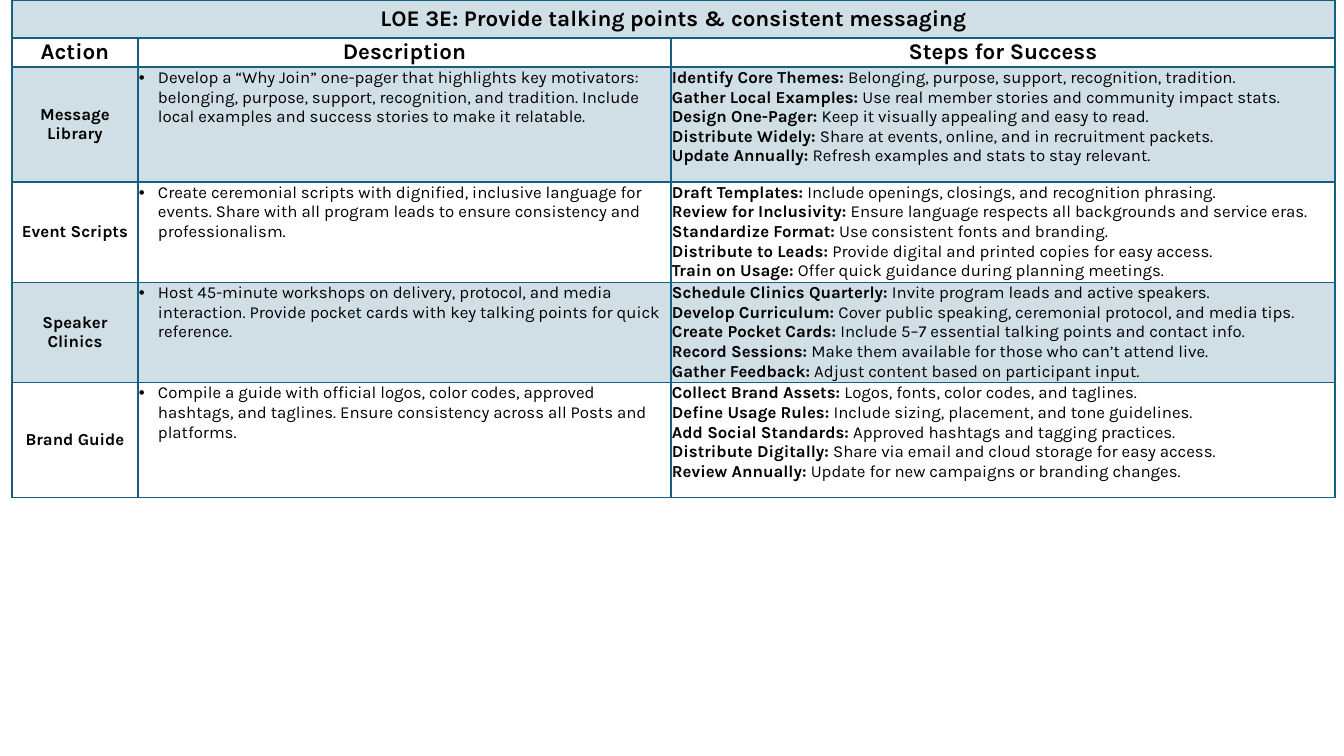
"""Builds the LOE 3E action plan slide as one table."""
from dataclasses import dataclass

from lxml import etree
from pptx import Presentation
from pptx.dml.color import RGBColor
from pptx.enum.text import MSO_ANCHOR, PP_ALIGN
from pptx.oxml.ns import qn
from pptx.util import Pt

TOP, MIDDLE = MSO_ANCHOR.TOP, MSO_ANCHOR.MIDDLE
LEFT, CENTER = PP_ALIGN.LEFT, PP_ALIGN.CENTER

TITLE = "LOE 3E: Provide talking points & consistent messaging"
HEADINGS = ("Action", "Description", "Steps for Success")
ACTIONS = [
    ("Message Library",
     "Develop a “Why Join” one-pager that highlights key motivators: belonging, purpose, "
     "support, recognition, and tradition. Include local examples and success stories to "
     "make it relatable.",
     [("Identify Core Themes:", "Belonging, purpose, support, recognition, tradition."),
      ("Gather Local Examples:", "Use real member stories and community impact stats."),
      ("Design One-Pager:", "Keep it visually appealing and easy to read."),
      ("Distribute Widely:", "Share at events, online, and in recruitment packets."),
      ("Update Annually:", "Refresh examples and stats to stay relevant.")]),
    ("Event Scripts",
     "Create ceremonial scripts with dignified, inclusive language for events. Share with "
     "all program leads to ensure consistency and professionalism.",
     [("Draft Templates:", "Include openings, closings, and recognition phrasing."),
      ("Review for Inclusivity:", "Ensure language respects all backgrounds and service eras."),
      ("Standardize Format:", "Use consistent fonts and branding."),
      ("Distribute to Leads:", "Provide digital and printed copies for easy access."),
      ("Train on Usage:", "Offer quick guidance during planning meetings.")]),
    ("Speaker Clinics",
     "Host 45-minute workshops on delivery, protocol, and media interaction. Provide pocket "
     "cards with key talking points for quick reference.",
     [("Schedule Clinics Quarterly:", "Invite program leads and active speakers."),
      ("Develop Curriculum:", "Cover public speaking, ceremonial protocol, and media tips."),
      ("Create Pocket Cards:", "Include 5–7 essential talking points and contact info."),
      ("Record Sessions:", "Make them available for those who can’t attend live."),
      ("Gather Feedback:", "Adjust content based on participant input.")]),
    ("Brand Guide",
     "Compile a guide with official logos, color codes, approved hashtags, and taglines. "
     "Ensure consistency across all Posts and platforms.",
     [("Collect Brand Assets:", "Logos, fonts, color codes, and taglines."),
      ("Define Usage Rules:", "Include sizing, placement, and tone guidelines."),
      ("Add Social Standards:", "Approved hashtags and tagging practices."),
      ("Distribute Digitally:", "Share via email and cloud storage for easy access."),
      ("Review Annually:", "Update for new campaigns or branding changes.")]),
]

SLIDE_SIZE = (1344, 756)
TABLE_LEFT, TABLE_TOP = 12, 0
COLUMN_WIDTHS = (126, 533, 664)
ROW_HEIGHTS = (38, 29, 115, 96, 96, 115)
CELL_MARGIN = 1
BULLET_INDENT = 19


@dataclass(frozen=True)
class Theme:
    """Colours, font and type sizes of the slide."""
    font: str = "Karla"
    text: str = "000000"
    accent: str = "156082"
    tint_percent: int = 20
    heading_size: int = 16
    body_size: int = 12
    border_width: int = 1


THEME = Theme()


def px(length):
    """Turn px into EMU."""
    return round(length * 914400 / 100.8)


def add_bullet(paragraph):
    """Give a paragraph a hanging round bullet."""
    properties = paragraph._p.get_or_add_pPr()
    properties.set("marL", str(px(BULLET_INDENT)))
    properties.set("indent", str(-px(BULLET_INDENT)))
    etree.SubElement(properties, qn("a:buFont"), typeface="Arial")
    etree.SubElement(properties, qn("a:buChar"), char="•")


def write_text(cell, paragraphs, size=THEME.body_size, align=LEFT, anchor=TOP, bullet=False):
    """Fill a cell with paragraphs, each a list of (text, bold) runs."""
    cell.vertical_anchor = anchor
    frame = cell.text_frame
    for index, runs in enumerate(paragraphs):
        paragraph = frame.add_paragraph() if index else frame.paragraphs[0]
        paragraph.alignment = align
        if bullet:
            add_bullet(paragraph)
        for text, bold in runs:
            run = paragraph.add_run()
            run.text = text
            run.font.name = THEME.font
            run.font.size = Pt(size)
            run.font.bold = bold
            run.font.color.rgb = RGBColor.from_string(THEME.text)


def style_cell(cell, tinted):
    """Set margins, fill and the four borders of a cell."""
    cell.margin_left = cell.margin_right = px(CELL_MARGIN)
    cell.margin_top = cell.margin_bottom = px(CELL_MARGIN)
    properties = cell._tc.get_or_add_tcPr()
    if tinted:
        cell.fill.solid()
        cell.fill.fore_color.rgb = RGBColor.from_string(THEME.accent)
        color = properties.find(f"{qn('a:solidFill')}/{qn('a:srgbClr')}")
        etree.SubElement(color, qn("a:alpha"), val=str(THEME.tint_percent * 1000))
    else:
        cell.fill.background()
    for index, side in enumerate(("lnL", "lnR", "lnT", "lnB")):
        border = etree.Element(qn(f"a:{side}"), w=str(Pt(THEME.border_width)))
        fill = etree.SubElement(border, qn("a:solidFill"))
        etree.SubElement(fill, qn("a:srgbClr"), val=THEME.accent)
        properties.insert(index, border)


def add_plan_table(slide):
    """Add the table with its sizes and cell styles."""
    table = slide.shapes.add_table(
        len(ROW_HEIGHTS), len(COLUMN_WIDTHS), px(TABLE_LEFT), px(TABLE_TOP),
        px(sum(COLUMN_WIDTHS)), px(sum(ROW_HEIGHTS))).table
    table.first_row = table.horz_banding = False
    for column, width in zip(table.columns, COLUMN_WIDTHS):
        column.width = px(width)
    for index, (row, height) in enumerate(zip(table.rows, ROW_HEIGHTS)):
        row.height = px(height)
        for cell in row.cells:
            style_cell(cell, tinted=index % 2 == 0)
    table.cell(0, 0).merge(table.cell(0, len(COLUMN_WIDTHS) - 1))
    return table


def main():
    """Build and save the presentation."""
    presentation = Presentation()
    presentation.slide_width, presentation.slide_height = map(px, SLIDE_SIZE)
    slide = presentation.slides.add_slide(presentation.slide_layouts.get_by_name("Blank"))
    table = add_plan_table(slide)
    heading = {"size": THEME.heading_size, "align": CENTER, "anchor": MIDDLE}
    write_text(table.cell(0, 0), [[(TITLE, True)]], **heading)
    for column, text in enumerate(HEADINGS):
        write_text(table.cell(1, column), [[(text, True)]], **heading)
    for row, (action, description, steps) in enumerate(ACTIONS, start=2):
        write_text(table.cell(row, 0), [[(action, True)]], align=CENTER, anchor=MIDDLE)
        write_text(table.cell(row, 1), [[(description, False)]], bullet=True)
        write_text(table.cell(row, 2),
                   [[(name, True), (f" {detail}", False)] for name, detail in steps])
    presentation.save("out.pptx")


if __name__ == "__main__":
    main()
